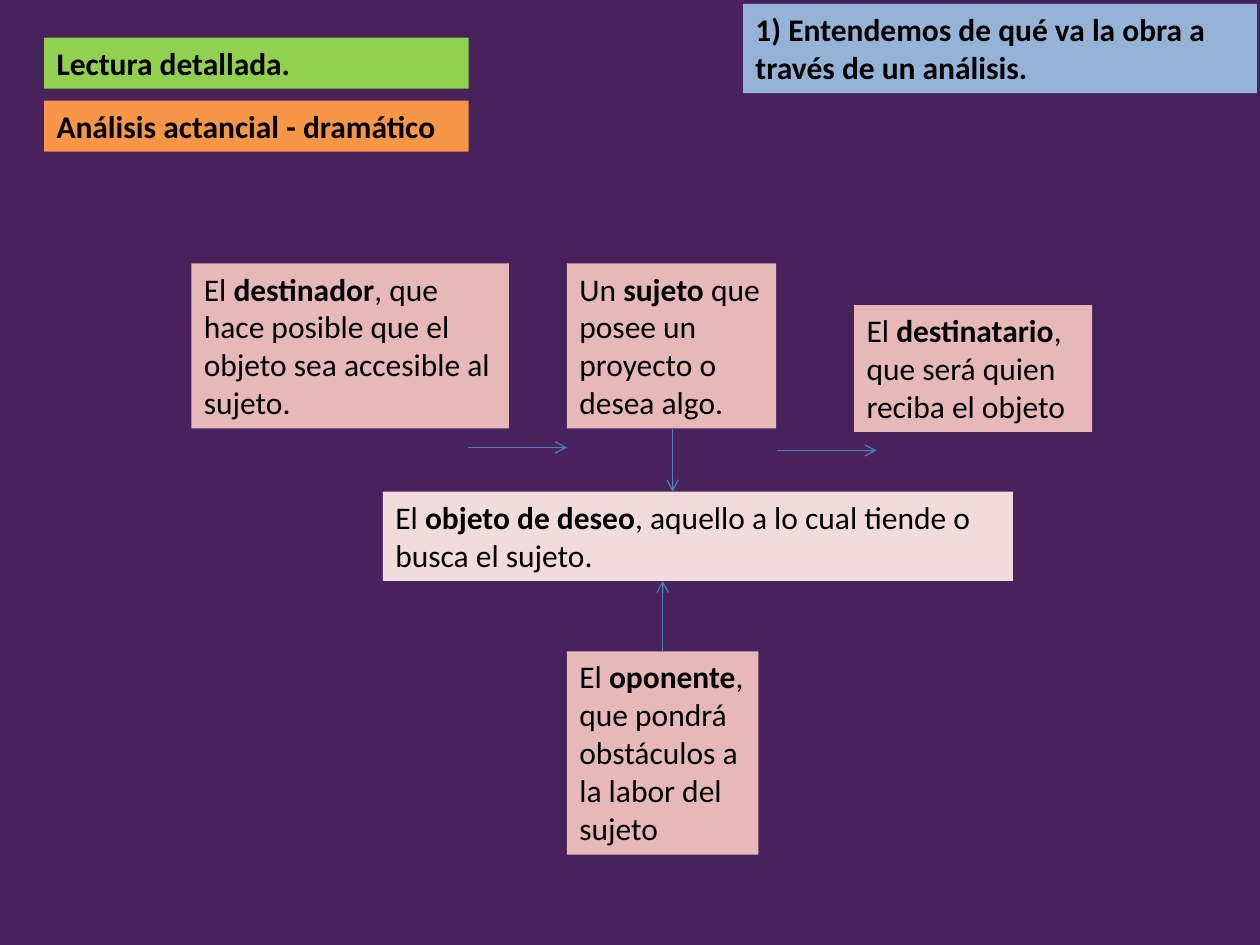
"""Build the slide with the actantial model of a play."""
from lxml import etree
from pptx import Presentation
from pptx.dml.color import RGBColor
from pptx.enum.shapes import MSO_CONNECTOR
from pptx.enum.text import MSO_AUTO_SIZE
from pptx.oxml.ns import qn
from pptx.util import Cm, Pt

STRAIGHT = MSO_CONNECTOR.STRAIGHT
GROW = MSO_AUTO_SIZE.SHAPE_TO_FIT_TEXT
BLANK_LAYOUT = 6
PURPLE, GREEN, ORANGE, BLUE = "47225C", "92D050", "F79646", "95B3D7"
PINK, PALE_PINK, BLACK, ARROW_BLUE = "E6B9B8", "F2DCDB", "000000", "4B7EBC"


def color(value):
    return RGBColor.from_string(value)


def write(box, text, size=18, font="Calibri", ink=BLACK):
    frame = box.text_frame
    frame.word_wrap = True
    frame.auto_size = GROW
    para = frame.paragraphs[0]
    for index, part in enumerate(text.split("*")):
        if part:
            span = para.add_run()
            span.text = part
            span.font.name = font
            span.font.size = Pt(size)
            span.font.bold = index % 2 == 1
            span.font.color.rgb = color(ink)


deck = Presentation()
deck.slide_width, deck.slide_height = Cm(25.4), Cm(19.05)
page = deck.slides.add_slide(deck.slide_layouts[BLANK_LAYOUT])
page.background.fill.solid()
page.background.fill.fore_color.rgb = color(PURPLE)

boxes = [
    (0.89, 0.76, 8.56, 1.03, GREEN, "*Lectura detallada.*"),
    (0.89, 2.03, 8.56, 1.03, ORANGE, "*Análisis actancial - dramático*"),
    (11.43, 5.31, 4.22, 3.33, PINK, "Un *sujeto* que posee un proyecto o desea algo."),
    (11.43, 13.13, 3.86, 4.1, PINK,
     "El *oponente*, que pondrá obstáculos a la labor del sujeto"),
    (3.86, 5.31, 6.4, 3.33, PINK,
     "El *destinador*, que hace posible que el objeto sea accesible al sujeto."),
    (17.22, 6.15, 4.8, 2.56, PINK,
     "El *destinatario*, que será quien reciba el objeto"),
    (7.72, 9.91, 12.7, 1.8, PALE_PINK,
     "El *objeto de deseo*, aquello a lo cual tiende o busca el sujeto."),
    (14.98, 0.08, 10.36, 1.8, BLUE,
     "*1) Entendemos de qué va la obra a través de un análisis.*"),
]
for left, top, width, height, fill, text in boxes:
    box = page.shapes.add_textbox(Cm(left), Cm(top), Cm(width), Cm(height))
    box.fill.solid()
    box.fill.fore_color.rgb = color(fill)
    write(box, text)

arrows = [
    (13.56, 8.64, 13.56, 9.91),
    (13.36, 13.13, 13.36, 11.71),
    (9.44, 9.02, 11.43, 9.02),
    (15.67, 9.08, 17.67, 9.08),
]
for ends in arrows:
    arrow = page.shapes.add_connector(STRAIGHT, *map(Cm, ends))
    arrow.line.color.rgb = color(ARROW_BLUE)
    arrow.line.width = Pt(0.75)
    etree.SubElement(arrow.line._get_or_add_ln(), qn("a:tailEnd"), type="arrow")
    etree.SubElement(arrow._element.spPr, qn("a:effectLst"))

deck.save("out.pptx")
